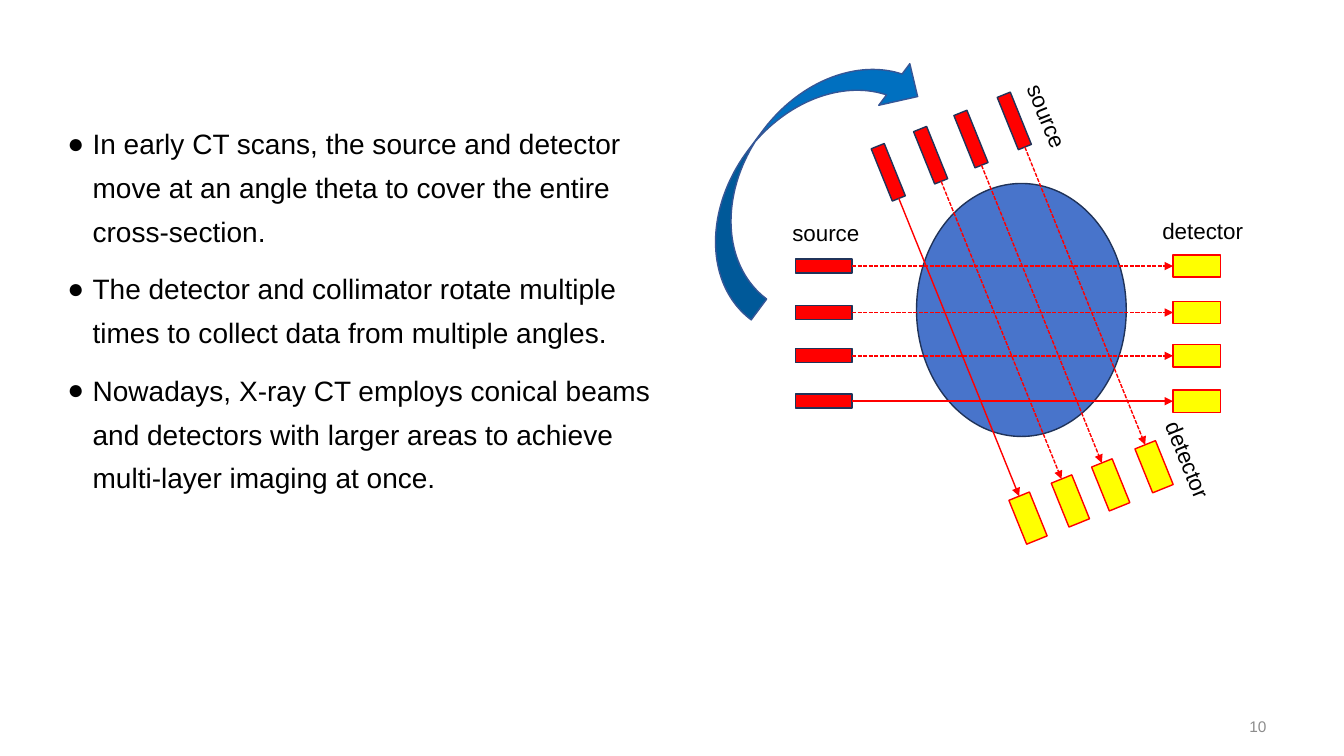
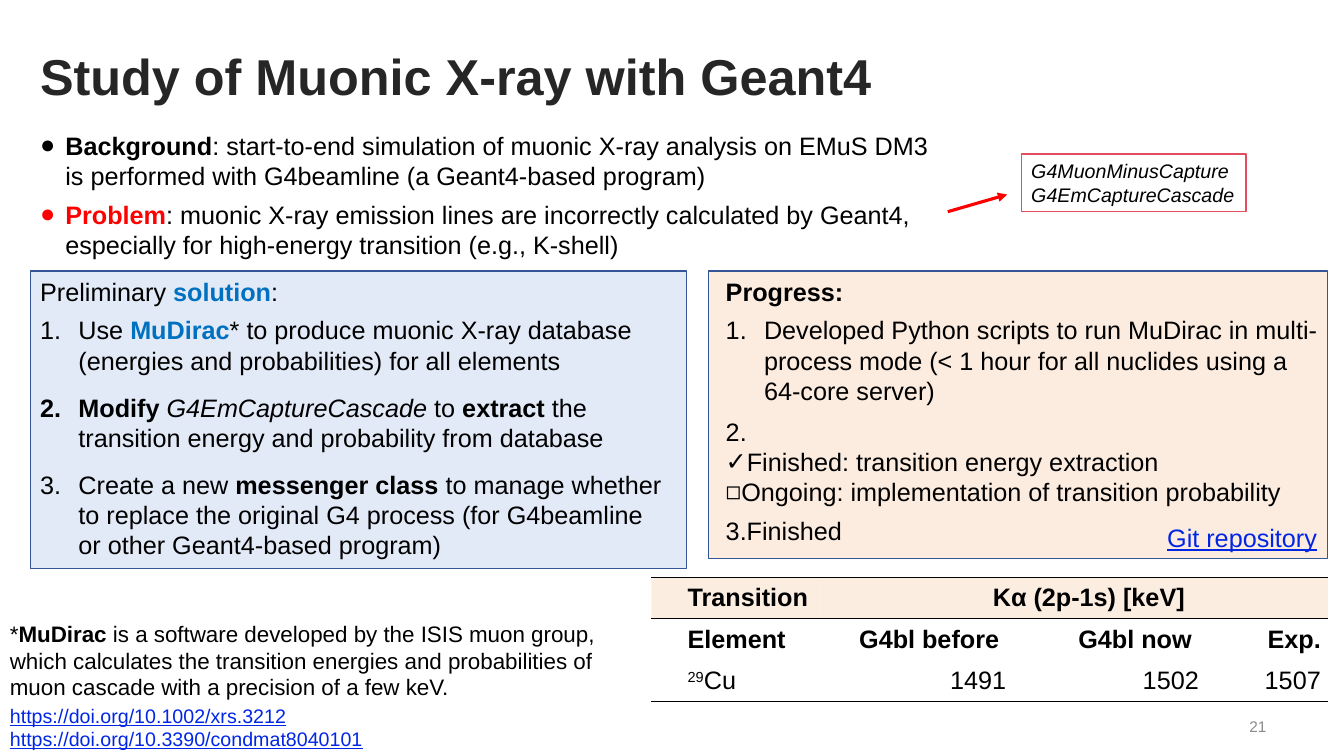
from dataclasses import dataclass
from math import cos, radians, sin

from lxml.etree import SubElement
from pptx import Presentation
from pptx.dml.color import RGBColor
from pptx.enum.dml import MSO_LINE
from pptx.enum.shapes import MSO_CONNECTOR, MSO_SHAPE as SHAPE
from pptx.enum.text import MSO_ANCHOR as ANCHOR, PP_ALIGN as ALIGN
from pptx.oxml.ns import qn
from pptx.util import Emu, Pt

PX = 9144  # 100 px to the inch
FONT = "Arial"
COLORS = {
    "text": "000000", "title": "262626", "number": "8C8C8C", "white": "FFFFFF",
    "red": "FF0000", "yellow": "FFFF00", "blue": "4874CB", "accent": "0070C0",
    "navy": "203359", "frame": "355696", "orange": "EE822F", "rose": "E54C5E",
    "link": "0026E5", "header": "FCE6D5",
}


@dataclass
class Para:
    runs: list
    bullet: str = ""
    number: int = 0
    hang: int = 0
    first: int = 0
    before: int = 0
    after: int = 0
    spacing: float = 1.0
    align: ALIGN = ALIGN.LEFT


def px(*lengths):
    return [Emu(round(length * PX)) for length in lengths]


def rgb(color):
    return RGBColor.from_string(COLORS[color])


# Text
def run(text, **style):
    return text, style


def set_bullet(paragraph, para):
    props = paragraph._p.get_or_add_pPr()
    props.set("marL", str(para.hang * PX))
    props.set("indent", str((para.first - para.hang) * PX))
    if para.bullet:
        SubElement(props, qn("a:buFont"), typeface=FONT)
        SubElement(props, qn("a:buChar"), char=para.bullet)
    elif para.number:
        SubElement(props, qn("a:buAutoNum"), type="arabicPeriod",
                   startAt=str(para.number))
    else:
        SubElement(props, qn("a:buNone"))


def write(frame, paras, size, color="text", anchor=ANCHOR.TOP):
    frame.word_wrap = True
    frame.vertical_anchor = anchor
    for index, para in enumerate(paras):
        paragraph = frame.add_paragraph() if index else frame.paragraphs[0]
        set_bullet(paragraph, para)
        paragraph.alignment = para.align
        paragraph.line_spacing = para.spacing
        paragraph.space_before = Pt(para.before)
        paragraph.space_after = Pt(para.after)
        for text, style in para.runs:
            piece = paragraph.add_run()
            piece.text = text
            font = piece.font
            font.name, font.size = FONT, Pt(size)
            font.color.rgb = rgb(style.get("color", color))
            font.bold = style.get("bold", False)
            font.italic = style.get("italic", False)
            font.underline = style.get("underline", False)
            if style.get("raised"):
                piece._r.get_or_add_rPr().set("baseline", "30000")


def add_text(slide, at, paras, size, angle=0, **options):
    box = slide.shapes.add_textbox(*px(*at))
    box.rotation = angle
    write(box.text_frame, paras, size, **options)


# Shapes
def set_fill(fill, color, opacity=100):
    fill.solid()
    fill.fore_color.rgb = rgb(color)
    if opacity < 100:
        hue = fill._xPr.find(".//" + qn("a:srgbClr"))
        SubElement(hue, qn("a:alpha"), val=str(opacity * 1000))


def add_shape(slide, kind, at, fill, line=None, angle=0, opacity=100):
    shape = slide.shapes.add_shape(kind, *px(*at))
    shape.shadow.inherit = False
    shape.rotation = angle
    set_fill(shape.fill, fill, opacity)
    if line:
        shape.line.color.rgb = rgb(line)
        shape.line.width = Pt(1)
    else:
        shape.line.fill.background()
    return shape


def add_arrow(slide, start, end, width=1, dashed=False):
    arrow = slide.shapes.add_connector(MSO_CONNECTOR.STRAIGHT, *px(*start, *end))
    arrow.line.color.rgb = rgb("red")
    arrow.line.width = Pt(width)
    if dashed:
        arrow.line.dash_style = MSO_LINE.SQUARE_DOT
    SubElement(arrow.line._get_or_add_ln(), qn("a:tailEnd"), type="triangle")
    SubElement(arrow._element.spPr, qn("a:effectLst"))
    return arrow


def add_beam(slide, source_at, angle, dashed):
    """Source, detector and the ray joining their facing sides."""
    reach, source_w, source_h, detector_w, detector_h = 370, 56, 14, 47, 22
    x, y = source_at

    def along(distance):
        turn = radians(angle)
        return x + distance * cos(turn), y + distance * sin(turn)

    def part(center, width, height, fill, line):
        at = center[0] - width / 2, center[1] - height / 2, width, height
        return add_shape(slide, SHAPE.RECTANGLE, at, fill, line, angle)

    source = part((x, y), source_w, source_h, "red", "navy")
    detector = part(along(reach), detector_w, detector_h, "yellow", "red")
    start, end = along(source_w / 2), along(reach - detector_w / 2)
    ray = add_arrow(slide, start, end, dashed=dashed)
    ray.begin_connect(source, 3)
    ray.end_connect(detector, 1)
    # Joining ignores rotation, so the end points are set again
    ray.begin_x, ray.begin_y = px(*start)
    ray.end_x, ray.end_y = px(*end)


# Table
def set_borders(cell, top=0, bottom=0):
    props = cell._tc.get_or_add_tcPr()
    widths = {"lnL": 0, "lnR": 0, "lnT": top, "lnB": bottom}
    for position, (side, width) in enumerate(widths.items()):
        border = SubElement(props, qn("a:" + side), w=str(Pt(width)))
        props.insert(position, border)
        if width:
            solid = SubElement(border, qn("a:solidFill"))
            SubElement(solid, qn("a:srgbClr"), val=COLORS["text"])
        else:
            SubElement(border, qn("a:noFill"))


def add_energy_table(slide):
    widths, row_height = (168, 191, 191, 121), 41
    rows = [
        [[run("Transition", bold=True)], [run("Kα (2p-1s) [keV]", bold=True)], [], []],
        [[run(head, bold=True)]
         for head in ("Element", "G4bl before ", "G4bl now ", "Exp.")],
        [[run("29", raised=True), run("Cu")], [run("1491")], [run("1502")], [run("1507")]],
    ]
    at = 646, 573, sum(widths), row_height * len(rows)
    table = slide.shapes.add_table(len(rows), len(widths), *px(*at)).table
    table.first_row = table.horz_banding = False
    for column, width in zip(table.columns, widths):
        column.width = px(width)[0]
    for r, cells in enumerate(rows):
        for c, runs in enumerate(cells):
            cell = table.cell(r, c)
            cell.margin_left = cell.margin_right = px(7)[0]
            cell.margin_top = cell.margin_bottom = 0
            cell.vertical_anchor = ANCHOR.MIDDLE
            header = r == 0
            set_fill(cell.fill, "header" if header else "white", 70 if header else 100)
            set_borders(cell, 1.5 if header else 0, 0 if r == 1 else 1)
            align = ALIGN.LEFT if c == 0 else ALIGN.CENTER if header else ALIGN.RIGHT
            write(cell.text_frame, [Para(runs, first=29, align=align)], 18,
                  anchor=ANCHOR.MIDDLE)
    table.cell(0, 1).merge(table.cell(0, 3))


# Slides
def new_slide(deck, number, title=""):
    slide = deck.slides.add_slide(deck.slide_layouts[6])
    add_text(slide, (971, 703, 295, 35), [Para([run(number)], align=ALIGN.RIGHT)], 11,
             color="number", anchor=ANCHOR.MIDDLE)
    if title:
        add_text(slide, (30, 36, 1200, 77), [Para([run(title, bold=True)])], 36,
                 color="title", anchor=ANCHOR.MIDDLE)
    return slide


def build_scan_slide(deck):
    slide = new_slide(deck, "10")
    points = (
        "In early CT scans, the source and detector move at an angle theta to cover "
        "the entire cross-section.",
        "The detector and collimator rotate multiple times to collect data from "
        "multiple angles.",
        "Nowadays, X-ray CT employs conical beams and detectors with larger areas to "
        "achieve multi-layer imaging at once.",
    )
    add_text(slide, (57, 111, 625, 384),
             [Para([run(point)], bullet="●", hang=25, after=10, spacing=1.3)
              for point in points], 20)

    # Scanned body, beams in two directions and their labels
    add_shape(slide, SHAPE.OVAL, (909, 182, 208, 251), "blue", "navy")
    tilt = 68
    level_sources = [(817, y) for y in (398, 353, 310, 264)]
    tilted_sources = [(881, 171), (923, 154), (963, 138), (1006, 120)]
    for angle, sources in ((0, level_sources), (tilt, tilted_sources)):
        for index, source_at in enumerate(sources):
            add_beam(slide, source_at, angle, dashed=index > 0)
    for label, at, angle in (
        ("source", (776, 212, 100, 37), 0),
        ("detector", (1143, 211, 107, 37), 0),
        ("source", (991, 103, 100, 37), tilt),
        ("detector", (1126, 441, 107, 37), tilt),
    ):
        add_text(slide, at, [Para([run(label)])], 16, angle)
    add_shape(slide, SHAPE.CURVED_DOWN_ARROW, (643, 114, 302, 103), "accent", "frame", 306.7)


def build_muon_slide(deck):
    slide = new_slide(deck, "21", "Study of Muonic X-ray with Geant4")
    add_text(slide, (30, 124, 924, 140), [
        Para([run("Background", bold=True),
              run(": start-to-end simulation of muonic X-ray analysis on EMuS DM3 is "
                  "performed with G4beamline (a Geant4-based program)")],
             bullet="●", hang=25, after=6),
        Para([run("Problem", bold=True, color="red"),
              run(": muonic X-ray emission lines are incorrectly calculated by Geant4, "
                  "especially for high-energy transition (e.g., K-shell)")],
             bullet="●", hang=25, after=6)], 18)

    # Class names behind the problem
    classes = add_shape(slide, SHAPE.RECTANGLE, (1013, 153, 223, 57), "white", "rose")
    write(classes.text_frame, [Para([run(name, italic=True)])
                               for name in ("G4MuonMinusCapture", "G4EmCaptureCascade")], 14)
    add_arrow(slide, (940, 210), (999, 193), 2.25)

    # Solution
    add_shape(slide, SHAPE.RECTANGLE, (30, 269, 651, 295), "blue", "frame", opacity=15)
    steps = [
        [run("Use "), run("MuDirac", bold=True, color="accent"),
         run("* to produce muonic X-ray database (energies and probabilities) for all "
             "elements")],
        [run("Modify ", bold=True), run("G4EmCaptureCascade ", italic=True), run("to "),
         run("extract", bold=True),
         run(" the transition energy and probability from database")],
        [run("Create a new "), run("messenger class", bold=True),
         run(" to manage whether to replace the original G4 process (for G4beamline or "
             "other Geant4-based program)")],
    ]
    heading = [run("Preliminary "), run("solution", bold=True, color="accent"), run(":")]
    add_text(slide, (30, 269, 637, 295), [Para(heading, after=6)] + [
        Para(step, number=1, hang=38, after=12) for step in steps], 18)

    # Progress
    add_shape(slide, SHAPE.RECTANGLE, (703, 269, 614, 285), "orange", "frame", opacity=15)
    add_text(slide, (710, 269, 607, 140), [
        Para([run("Progress:", bold=True)], after=6),
        Para([run("Developed Python scripts to run MuDirac in multi-process mode "
                  "(< 1 hour for all nuclides using a 64-core server)")],
             number=1, hang=38, after=6)], 18)
    add_text(slide, (710, 408, 607, 140), [
        Para([run(" ")], number=2, hang=38),
        Para([run("Finished: transition energy extraction")], bullet="✓"),
        Para([run("Ongoing: implementation of transition probability")], bullet="◻"),
        Para([run("Finished")], number=3, before=6)], 18)
    add_text(slide, (1147, 513, 170, 40),
             [Para([run("Git repository", underline=True)], align=ALIGN.CENTER)], 18,
             color="link")

    # Footnote and references
    footnote = add_shape(slide, SHAPE.RECTANGLE, (0, 610, 637, 140), "white")
    write(footnote.text_frame, [Para([
        run("*"), run("MuDirac ", bold=True),
        run("is a software developed by the ISIS muon group, which calculates the "
            "transition energies and probabilities of muon cascade with a precision of a "
            "few keV.")])], 16)
    links = "https://doi.org/10.1002/xrs.3212", "https://doi.org/10.3390/condmat8040101"
    add_text(slide, (0, 693, 371, 57), [Para([run(link, underline=True)]) for link in links],
             14, color="link")
    add_energy_table(slide)


def main():
    deck = Presentation()
    deck.slide_width, deck.slide_height = px(1333, 750)
    build_scan_slide(deck)
    build_muon_slide(deck)
    deck.save("out.pptx")


if __name__ == "__main__":
    main()
